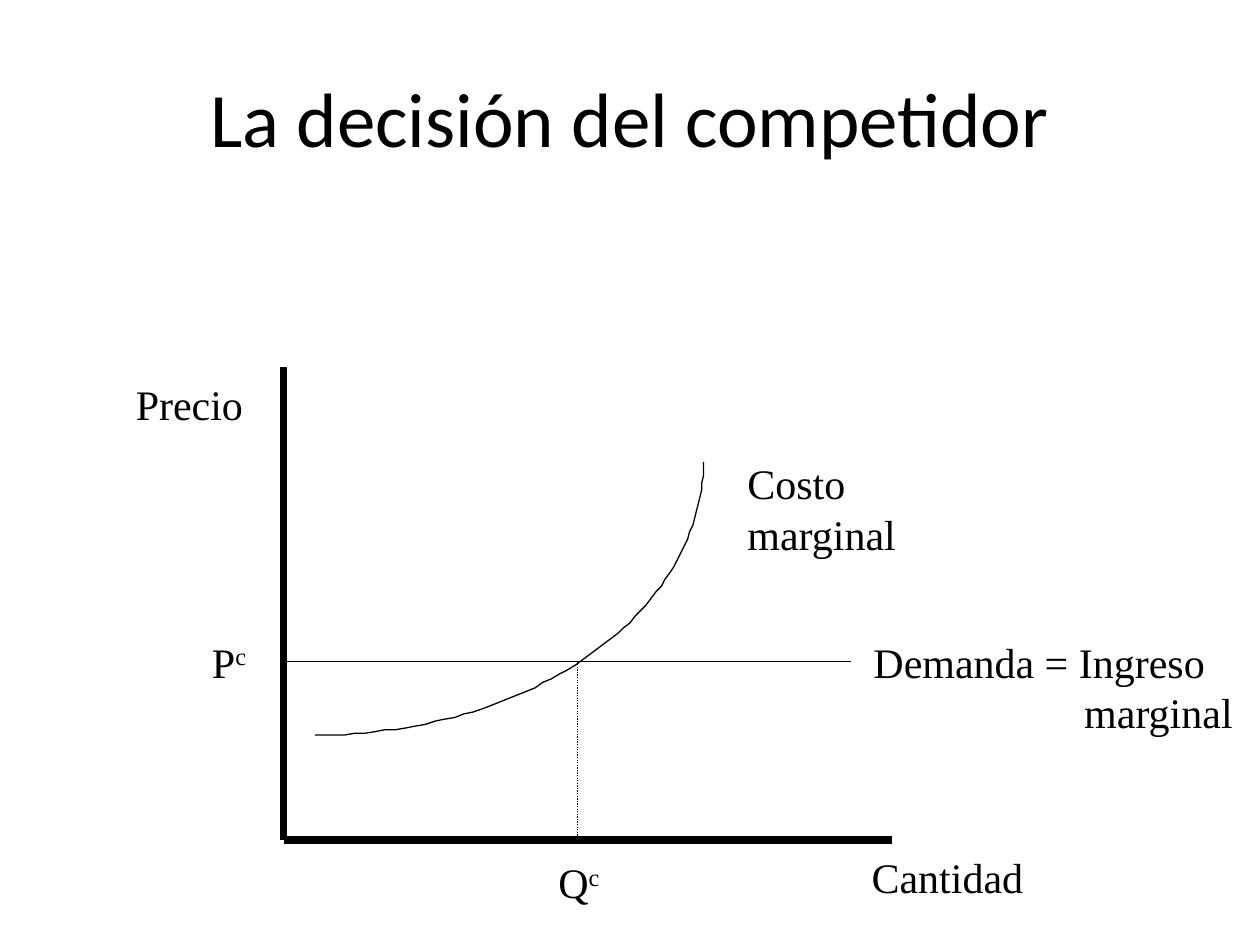
"""Build a slide on the output decision of a competitive firm."""
from math import cos, pi, sin
from lxml import etree
from pptx import Presentation
from pptx.dml.color import RGBColor
from pptx.enum import dml, shapes, text
from pptx.oxml.ns import qn
from pptx.util import Pt

theme = {
    "ink": RGBColor(0, 0, 0),
    "paper": RGBColor(255, 255, 255),
    "head": {"name": "Calibri", "size": Pt(44)},
    "label": {"name": "Times New Roman", "size": Pt(24)},
    "axis": Pt(4.5),
    "thin": Pt(0.75),
}


def style(font, kind):
    for key, val in theme[kind].items():
        setattr(font, key, val)
    font.color.rgb = theme["ink"]


deck = Presentation()
deck.slide_width, deck.slide_height = Pt(720), Pt(540)
slide = deck.slides.add_slide(deck.slide_layouts[5])
slide.background.fill.solid()
slide.background.fill.fore_color.rgb = theme["paper"]

title = slide.shapes.title
place = {"left": 36, "top": 21.6, "width": 648, "height": 90}
for key, val in place.items():
    setattr(title, key, Pt(val))
title.text_frame.text = "La decisión del competidor"
title.text_frame.vertical_anchor = text.MSO_ANCHOR.MIDDLE
para = title.text_frame.paragraphs[0]
para.alignment = text.PP_ALIGN.CENTER
style(para.runs[0].font, "head")

left, base = 162, 480
price, amount = 378, 330
lines = [
    (left, 210, left, base, "axis", None),
    (left, base, 510, base, "axis", None),
    (left, price, 486, price, "thin", None),
    (amount, price, amount, base, "thin", dml.MSO_LINE.ROUND_DOT),
]
for x1, y1, x2, y2, width, dash in lines:
    line = slide.shapes.add_connector(
        shapes.MSO_CONNECTOR.STRAIGHT, Pt(x1), Pt(y1), Pt(x2), Pt(y2))
    line.line.color.rgb = theme["ink"]
    line.line.width = theme[width]
    if dash:
        line.line.dash_style = dash
    etree.SubElement(line._element.spPr, qn("a:effectLst"))

steps = 60
arc = [(180 + 222 * sin(turn), 264 + 156 * cos(turn))
       for turn in (pi / 2 * step / steps for step in range(steps + 1))]
pen = slide.shapes.build_freeform(*arc[0], scale=Pt(1))
pen.add_line_segments(arc[1:], close=False)
cost = pen.convert_to_shape()
cost.shadow.inherit = False
cost.fill.background()
cost.line.color.rgb = theme["ink"]
cost.line.width = theme["thin"]

labels = [
    (491, 483, 101, 36, ["Cantidad"], ""),
    (70.5, 213, 76, 36, ["Precio"], ""),
    (492, 360, 219.5, 65, ["Demanda = Ingreso", "marginal"], ""),
    (420, 258, 161, 36, ["Costo marginal"], ""),
    (312, 486, 39, 36, ["Q"], "c"),
    (114, 360, 40, 65, ["P"], "c"),
]
for x, y, w, h, words, power in labels:
    box = slide.shapes.add_textbox(Pt(x), Pt(y), Pt(w), Pt(h))
    frame = box.text_frame
    frame.word_wrap = len(words) > 1
    frame.text = "\n".join(words)
    for para in frame.paragraphs[1:]:
        para.alignment = text.PP_ALIGN.RIGHT
    if power:
        run = frame.paragraphs[0].add_run()
        run.text = power
        run.font._element.set("baseline", "30000")
    for para in frame.paragraphs:
        for run in para.runs:
            style(run.font, "label")

deck.save("out.pptx")
